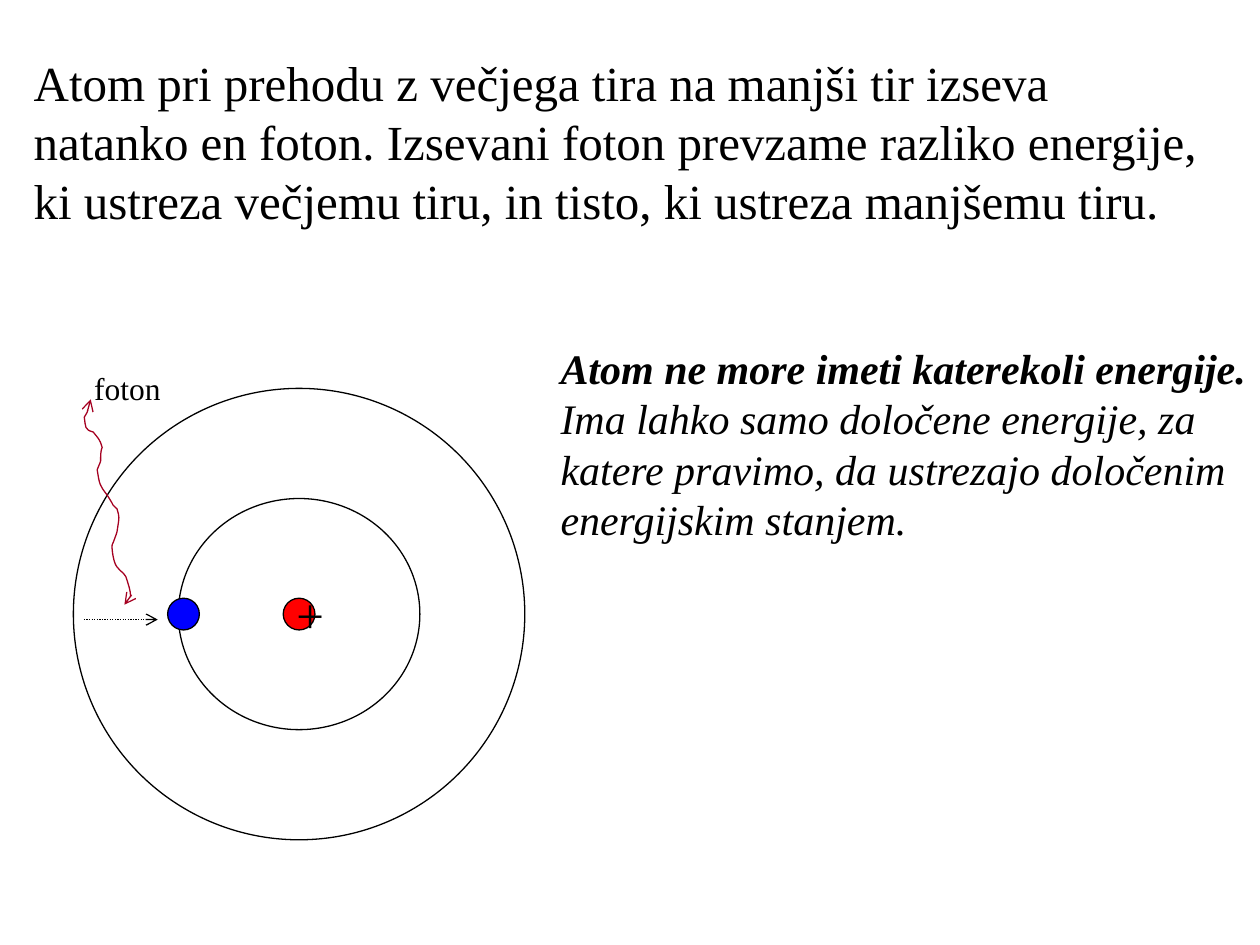
from dataclasses import dataclass

from lxml import etree
from pptx import Presentation
from pptx import util as u
from pptx.dml.color import RGBColor
from pptx.enum import dml, shapes, text
from pptx.oxml.ns import qn


@dataclass(frozen=True)
class Theme:
    font: str = "Times New Roman"
    ink: str = "000000"
    core: str = "FF0000"
    charge: str = "0000FF"
    wave: str = "A50021"
    big: int = 28
    mid: int = 24
    small: int = 18
    line: float = 0.75


@dataclass(frozen=True)
class Disc:
    x: float
    y: float
    wide: float
    high: float
    fill: str = ""
    sign: str = ""


@dataclass(frozen=True)
class Note:
    x: float
    y: float
    wide: float
    high: float
    size: int
    lines: tuple[str, ...]
    slant: bool = False
    lead: bool = False


look = Theme()

DISCS = (
    Disc(6.03, 12.38, 9.1, 9.1),
    Disc(6.03, 12.38, 4.87, 4.66),
    Disc(6.03, 12.38, 0.64, 0.64, look.core, "+"),
    Disc(3.7, 12.38, 0.64, 0.64, look.charge),
)

NOTES = (
    Note(0.43, 0.94, 24, 3.81, look.big, (
        "Atom pri prehodu z večjega tira na manjši tir izseva",
        "natanko en foton. Izsevani foton prevzame razliko energije,",
        "ki ustreza večjemu tiru, in tisto, ki ustreza manjšemu tiru.",
    )),
    Note(1.65, 7.32, 1.85, 1.02, look.small, ("foton",)),
    Note(11.05, 6.78, 14.35, 4.32, look.mid, (
        "Atom ne more imeti katerekoli energije.",
        "Ima lahko samo določene energije, za",
        "katere pravimo, da ustrezajo določenim",
        "energijskim stanjem.",
    ), slant=True, lead=True),
)

WAVE = (
    (1.83, 8.05),
    (1.8, 8.2), (1.78, 8.28), (1.7, 8.41),
    (1.73, 8.61), (1.7, 8.66), (1.88, 8.71),
    (1.98, 8.84), (2.01, 8.84), (2.06, 9.02),
    (2.03, 9.09), (2.03, 9.19), (2.03, 9.3),
    (2.01, 9.35), (1.96, 9.47), (1.96, 9.47),
    (2.01, 9.78), (2.01, 9.78), (2.16, 9.98),
    (2.36, 10.29), (2.21, 10.11), (2.36, 10.26),
    (2.41, 10.44), (2.41, 10.39), (2.36, 10.72),
    (2.34, 10.8), (2.31, 10.85), (2.29, 10.92),
    (2.26, 10.95), (2.26, 11.02), (2.26, 11.02),
    (2.26, 11.1), (2.29, 11.35), (2.36, 11.43),
    (2.39, 11.48), (2.44, 11.51), (2.49, 11.56),
    (2.51, 11.58), (2.54, 11.63), (2.54, 11.63),
    (2.59, 11.79), (2.74, 12.19), (2.51, 12.19),
)


def paint(line, color: str) -> None:
    line.color.rgb = RGBColor.from_string(color)
    line.width = u.Pt(look.line)


def tip(shape, *ends: str) -> None:
    ln = shape.line._get_or_add_ln()
    for end in ends:
        etree.SubElement(ln, qn(f"a:{end}"), type="arrow")


def write(para, words: str, *, size: int, bold: bool = False,
          slant: bool = False, align=text.PP_ALIGN.LEFT) -> None:
    para.alignment = align
    run = para.add_run()
    run.text = words
    font = run.font
    font.name = look.font
    font.size = u.Pt(size)
    font.bold = bold
    font.italic = slant
    font.color.rgb = RGBColor.from_string(look.ink)


def disc(slide, item: Disc) -> None:
    oval = slide.shapes.add_shape(
        shapes.MSO_SHAPE.OVAL,
        u.Cm(item.x - item.wide / 2), u.Cm(item.y - item.high / 2),
        u.Cm(item.wide), u.Cm(item.high))
    oval.shadow.inherit = False
    paint(oval.line, look.ink)
    if item.fill:
        oval.fill.solid()
        oval.fill.fore_color.rgb = RGBColor.from_string(item.fill)
    else:
        oval.fill.background()
    if item.sign:
        frame = oval.text_frame
        frame.word_wrap = False
        frame.vertical_anchor = text.MSO_ANCHOR.MIDDLE
        frame.margin_left = u.Cm(0.45)
        frame.margin_right = frame.margin_top = frame.margin_bottom = 0
        write(frame.paragraphs[0], item.sign, size=look.big,
              align=text.PP_ALIGN.CENTER)


def note(slide, item: Note) -> None:
    box = slide.shapes.add_textbox(
        u.Cm(item.x), u.Cm(item.y), u.Cm(item.wide), u.Cm(item.high))
    frame = box.text_frame
    frame.word_wrap = True
    frame.margin_right = 0
    for row, words in enumerate(item.lines):
        para = frame.add_paragraph() if row else frame.paragraphs[0]
        write(para, words, size=item.size, slant=item.slant,
              bold=item.lead and row == 0)


def jump(slide) -> None:
    y = u.Cm(12.49)
    link = slide.shapes.add_connector(
        shapes.MSO_CONNECTOR.STRAIGHT, u.Cm(1.69), y, u.Cm(3.18), y)
    paint(link.line, look.ink)
    link.line.dash_style = dml.MSO_LINE.ROUND_DOT
    tip(link, "tailEnd")
    etree.SubElement(link.element.spPr, qn("a:effectLst"))


def photon(slide) -> None:
    first, *rest = [(u.Cm(x), u.Cm(y)) for x, y in WAVE]
    pen = slide.shapes.build_freeform(*first)
    pen.add_line_segments(rest, close=False)
    curve = pen.convert_to_shape()
    curve.shadow.inherit = False
    curve.fill.background()
    paint(curve.line, look.wave)
    tip(curve, "headEnd", "tailEnd")
    steps = list(curve.element.iter(qn("a:lnTo")))
    for at in range(0, len(steps), 3):
        first, *more = steps[at:at + 3]
        first.tag = qn("a:cubicBezTo")
        for step in more:
            first.append(step[0])
            step.getparent().remove(step)


def main() -> None:
    deck = Presentation()
    deck.slide_width, deck.slide_height = u.Cm(25.4), u.Cm(19.05)
    slide = deck.slides.add_slide(deck.slide_layouts[6])
    for item in DISCS:
        disc(slide, item)
    jump(slide)
    photon(slide)
    for item in NOTES:
        note(slide, item)
    deck.save("out.pptx")


if __name__ == "__main__":
    main()
